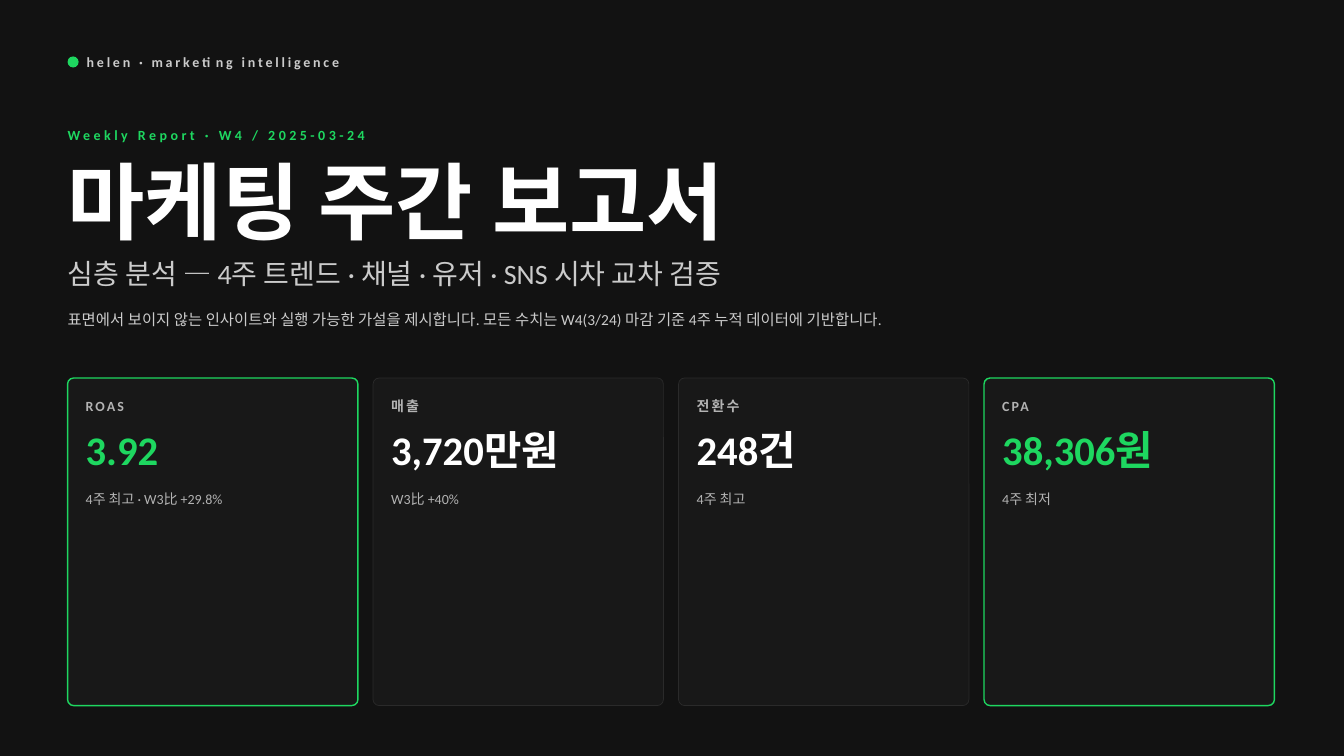
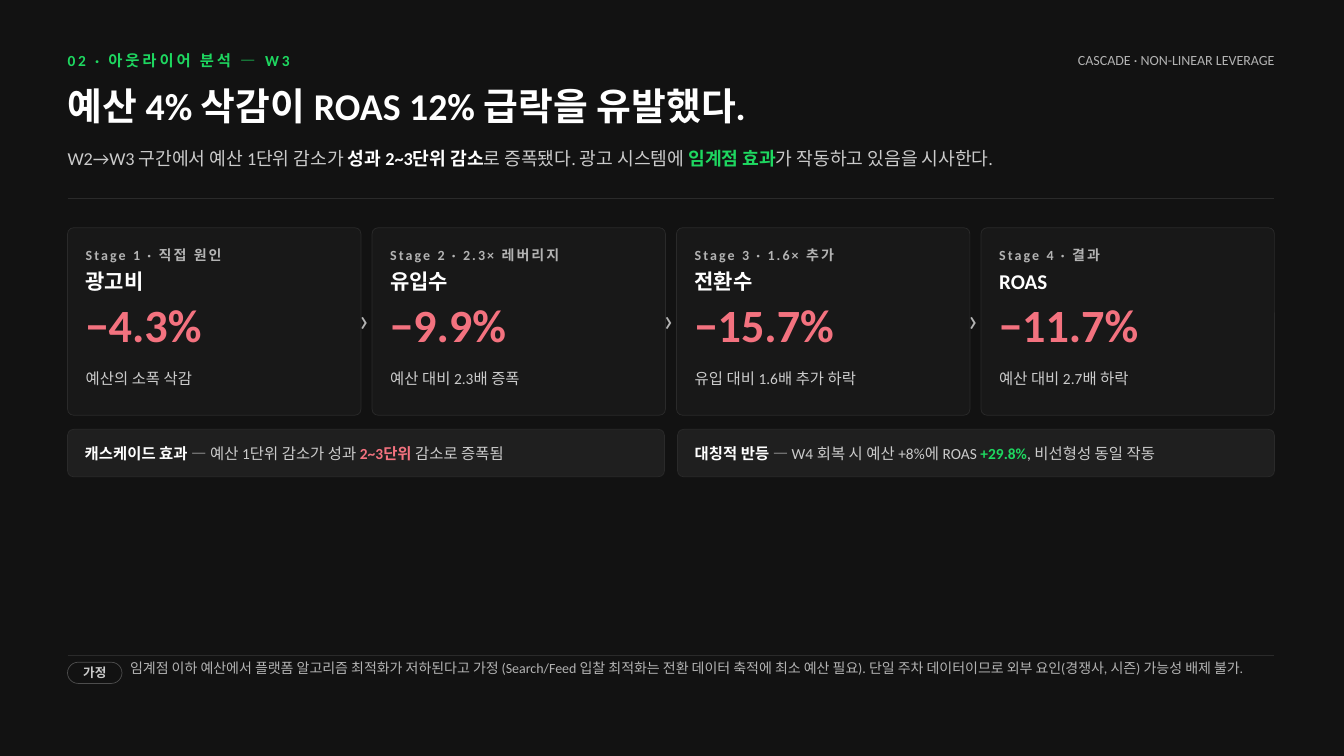
from dataclasses import dataclass

from lxml import etree
from pptx import Presentation
from pptx.dml.color import RGBColor
from pptx.enum import shapes, text
from pptx.oxml import ns
from pptx.util import Inches, Pt


@dataclass(frozen=True)
class Theme:
    font: str = "Calibri"
    back: str = "121212"
    card: str = "181818"
    note: str = "1F1F1F"
    edge: str = "2A2A2A"
    rim: str = "4D4D4D"
    green: str = "1ED760"
    red: str = "F3727F"
    white: str = "FFFFFF"
    soft: str = "CBCBCB"
    dim: str = "B3B3B3"
    tiny: int = 9
    small: int = 10
    body: int = 11
    lead: int = 13
    name: int = 15
    sub: int = 20
    mark: int = 23
    head: int = 27
    score: int = 29
    drop: int = 33
    cover: int = 60


T = Theme()
LEFT, WIDE = 0.67, 11.97
ROUND, PAD = 0.06, 0.18
MID, TOP = text.MSO_ANCHOR.MIDDLE, text.MSO_ANCHOR.TOP
CENTER, RIGHT = text.PP_ALIGN.CENTER, text.PP_ALIGN.RIGHT


def tint(code):
    return RGBColor.from_string(code)


def write(frame, runs, size, anchor=MID, align=None, gap=0):
    frame.word_wrap = True
    frame.vertical_anchor = anchor
    frame.margin_left = frame.margin_right = 0
    frame.margin_top = frame.margin_bottom = 0
    para = frame.paragraphs[0]
    para.alignment = align
    for words, color, bold in runs:
        run = para.add_run()
        run.text = words
        font = run.font
        font.name, font.size, font.bold = T.font, Pt(size), bold
        font.color.rgb = tint(color)
        if gap:
            run._r.get_or_add_rPr().set("spc", str(int(gap * 100)))


def label(slide, box, runs, size, **style):
    area = slide.shapes.add_textbox(*map(Inches, box))
    write(area.text_frame, runs, size, **style)


def shape(slide, kind, box, fill, line=None, weight=0.5):
    item = slide.shapes.add_shape(kind, *map(Inches, box))
    item.shadow.inherit = False
    item.fill.solid()
    item.fill.fore_color.rgb = tint(fill)
    if line:
        item.line.color.rgb = tint(line)
        item.line.width = Pt(weight)
    else:
        item.line.fill.background()
    return item


def panel(slide, box, fill, line=T.edge, weight=0.5, curve=ROUND):
    item = shape(slide, shapes.MSO_SHAPE.ROUNDED_RECTANGLE, box, fill, line, weight)
    item.adjustments[0] = curve / min(box[2:])
    return item


def rule(slide, top):
    ends = map(Inches, (LEFT, top, LEFT + WIDE, top))
    line = slide.shapes.add_connector(shapes.MSO_CONNECTOR.STRAIGHT, *ends)
    line.line.color.rgb = tint(T.edge)
    line.line.width = Pt(0.75)
    etree.SubElement(line._element.spPr, ns.qn("a:effectLst"))


def row(items, gap):
    width = (WIDE - gap * (len(items) - 1)) / len(items)
    for spot, item in enumerate(items):
        yield LEFT + spot * (width + gap), width, item


def stack(slide, left, width, lines):
    for top, high, words, size, color, bold, gap in lines:
        box = (left + PAD, top, width - 2 * PAD, high)
        label(slide, box, [(words, color, bold)], size, gap=gap)


def start(deck):
    slide = deck.slides.add_slide(deck.slide_layouts[6])
    slide.background.fill.solid()
    slide.background.fill.fore_color.rgb = tint(T.back)
    return slide


def cover(deck):
    slide = start(deck)
    shape(slide, shapes.MSO_SHAPE.OVAL, (LEFT, 0.56, 0.11, 0.11), T.green)
    label(slide, (0.86, 0.53, 4.16, 0.17),
          [("helen · marketing intelligence", T.soft, True)], T.small, gap=2)
    label(slide, (LEFT, 1.24, WIDE, 0.19),
          [("Weekly Report · W4 / 2025-03-24", T.green, True)], T.small, gap=2.5)
    label(slide, (LEFT, 1.53, WIDE, 0.9),
          [("마케팅 주간 보고서", T.white, True)], T.cover)
    label(slide, (LEFT, 2.54, WIDE, 0.33),
          [("심층 분석 — 4주 트렌드 · 채널 · 유저 · SNS 시차 교차 검증", T.soft, False)],
          T.sub, anchor=TOP)
    label(slide, (LEFT, 2.99, 8.17, 0.36),
          [("표면에서 보이지 않는 인사이트와 실행 가능한 가설을 제시합니다. "
            "모든 수치는 W4(3/24) 마감 기준 4주 누적 데이터에 기반합니다.", T.soft, False)],
          T.body)
    cards = [
        ("ROAS", "3.92", "4주 최고 · W3比 +29.8%", True),
        ("매출", "3,720만원", "W3比 +40%", False),
        ("전환수", "248건", "4주 최고", False),
        ("CPA", "38,306원", "4주 최저", True),
    ]
    for left, width, (name, score, note, best) in row(cards, 0.15):
        line, weight = (T.green, 1) if best else (T.edge, 0.5)
        panel(slide, (left, 3.75, width, 3.25), T.card, line, weight)
        stack(slide, left, width, [
            (3.94, 0.18, name, T.small, T.dim, True, 1.5),
            (4.18, 0.56, score, T.score, T.green if best else T.white, True, 0),
            (4.86, 0.18, note, T.small, T.dim, False, 0),
        ])


def cascade(deck):
    slide = start(deck)
    label(slide, (LEFT, 0.5, 7.78, 0.19),
          [("02 · 아웃라이어 분석 — W3", T.green, True)], T.body, gap=2)
    label(slide, (8.45, 0.5, 4.19, 0.19),
          [("CASCADE · NON-LINEAR LEVERAGE", T.dim, False)], T.small, align=RIGHT)
    label(slide, (LEFT, 0.82, WIDE, 0.56),
          [("예산 4% 삭감이 ROAS 12% 급락을 유발했다.", T.white, True)],
          T.head, anchor=TOP)
    label(slide, (LEFT, 1.46, WIDE, 0.42), [
        ("W2→W3 구간에서 예산 1단위 감소가 ", T.soft, False),
        ("성과 2~3단위 감소", T.white, True),
        ("로 증폭됐다. 광고 시스템에 ", T.soft, False),
        ("임계점 효과", T.green, True),
        ("가 작동하고 있음을 시사한다.", T.soft, False),
    ], T.lead, anchor=TOP)
    rule(slide, 1.97)

    stages = [
        ("Stage 1 · 직접 원인", "광고비", "−4.3%", "예산의 소폭 삭감"),
        ("Stage 2 · 2.3× 레버리지", "유입수", "−9.9%", "예산 대비 2.3배 증폭"),
        ("Stage 3 · 1.6× 추가", "전환수", "−15.7%", "유입 대비 1.6배 추가 하락"),
        ("Stage 4 · 결과", "ROAS", "−11.7%", "예산 대비 2.7배 하락"),
    ]
    for left, width, (stage, name, drop, note) in row(stages, 0.11):
        panel(slide, (left, 2.26, width, 1.86), T.card)
        if left > LEFT:
            label(slide, (left - 0.14, 2.99, 0.12, 0.35),
                  [("›", T.dim, False)], T.mark, align=CENTER)
        stack(slide, left, width, [
            (2.44, 0.18, stage, T.small, T.dim, True, 1.5),
            (2.67, 0.24, name, T.name, T.white, True, 0),
            (2.93, 0.57, drop, T.drop, T.red, True, 0),
            (3.57, 0.36, note, T.body, T.soft, False, 0),
        ])

    notes = [
        [("캐스케이드 효과", T.white, True),
         (" — 예산 1단위 감소가 성과 ", T.soft, False),
         ("2~3단위", T.red, True),
         (" 감소로 증폭됨", T.soft, False)],
        [("대칭적 반등", T.white, True),
         (" — W4 회복 시 예산 +8%에 ROAS ", T.soft, False),
         ("+29.8%", T.green, True),
         (", 비선형성 동일 작동", T.soft, False)],
    ]
    for left, width, runs in row(notes, 0.13):
        panel(slide, (left, 4.26, width, 0.47), T.note)
        label(slide, (left + 0.17, 4.32, width - 0.34, 0.36), runs, T.body)

    rule(slide, 6.5)
    pill = panel(slide, (LEFT, 6.57, 0.54, 0.21), T.back, T.rim, curve=0.105)
    write(pill.text_frame, [("가정", T.soft, True)], T.tiny, align=CENTER)
    label(slide, (1.29, 6.54, 11.35, 0.43),
          [("임계점 이하 예산에서 플랫폼 알고리즘 최적화가 저하된다고 가정 "
            "(Search/Feed 입찰 최적화는 전환 데이터 축적에 최소 예산 필요). "
            "단일 주차 데이터이므로 외부 요인(경쟁사, 시즌) 가능성 배제 불가.", T.dim, False)],
          T.small, anchor=TOP)


def main():
    deck = Presentation()
    deck.slide_width, deck.slide_height = Inches(13.33), Inches(7.5)
    cover(deck)
    cascade(deck)
    deck.save("out.pptx")


if __name__ == "__main__":
    main()
